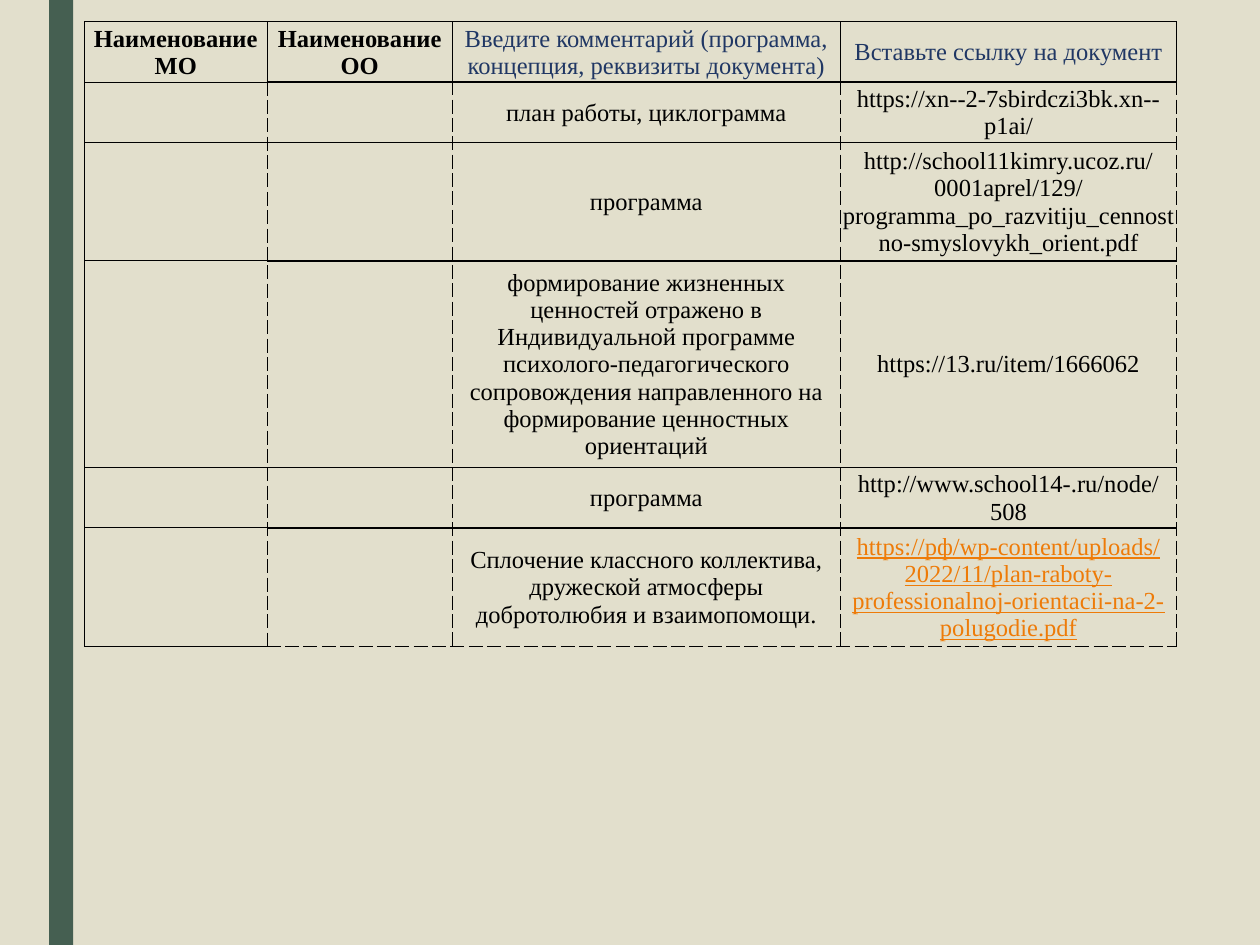
"""Build a slide with a table of school programmes and document links."""
import pptx
import pptx.dml.color
import pptx.enum.shapes
import pptx.enum.text
import pptx.oxml
import pptx.oxml.ns
import pptx.util

Inches = pptx.util.Inches


def rgb(color):
    return pptx.dml.color.RGBColor.from_string(color)


def add_text(tf, text, color="000000", bold=False, underline=False, size=14):
    p = tf.paragraphs[0]
    p.alignment = pptx.enum.text.PP_ALIGN.CENTER
    r = p.add_run()
    r.text = text
    r.font.name = "Times New Roman"
    r.font.size = pptx.util.Pt(size)
    r.font.bold = bold
    r.font.underline = underline
    r.font.color.rgb = rgb(color)


prs = pptx.Presentation()
prs.slide_width, prs.slide_height = Inches(10), Inches(7.5)
s = prs.slides.add_slide(prs.slide_layouts[6])
s.background.fill.solid()
s.background.fill.fore_color.rgb = rgb("E2DFCC")

sp = s.shapes.add_shape(pptx.enum.shapes.MSO_SHAPE.RECTANGLE,
                        Inches(0.39), 0, Inches(0.19), prs.slide_height)
sp.shadow.inherit = False
sp.fill.solid()
sp.fill.fore_color.rgb = rgb("455F51")
sp.line.fill.background()

rows = [
    ("Наименование МО", "Наименование ОО",
     "Введите комментарий (программа, концепция, реквизиты документа)",
     "Вставьте ссылку на документ"),
    ("", "", "план работы, циклограмма", "https://xn--2-7sbirdczi3bk.xn--p1ai/"),
    ("", "", "программа",
     "http://school11kimry.ucoz.ru/0001aprel/129/programma_po_razvitiju_cennostno-smyslovykh_orient.pdf"),
    ("", "", "формирование жизненных ценностей отражено в Индивидуальной программе "
     "психолого-педагогического сопровождения направленного на формирование ценностных ориентаций",
     "https://13.ru/item/1666062"),
    ("", "", "программа", "http://www.school14-.ru/node/508"),
    ("", "", "Сплочение классного коллектива, дружеской атмосферы добротолюбия и взаимопомощи.",
     "https://рф/wp-content/uploads/2022/11/plan-raboty-professionalnoj-orientacii-na-2-polugodie.pdf"),
]
widths = [1.45, 1.47, 3.08, 2.67]
heights = [0.48, 0.48, 0.94, 1.64, 0.48, 0.94]
last = len(rows) - 1
thin, thick, dashed = (0.5, "solid"), (1, "solid"), (0.5, "dash")

table = s.shapes.add_table(len(rows), len(widths), Inches(0.67), Inches(0.17),
                           Inches(sum(widths)), Inches(sum(heights))).table
table.first_row = table.horz_banding = False
for column, width in zip(table.columns, widths):
    column.width = Inches(width)
for row, height in zip(table.rows, heights):
    row.height = Inches(height)

for i, texts in enumerate(rows):
    for j, text in enumerate(texts):
        cell = table.cell(i, j)
        cell.vertical_anchor = pptx.enum.text.MSO_ANCHOR.MIDDLE
        cell.margin_left = cell.margin_right = cell.margin_top = Inches(0.01)
        cell.margin_bottom = 0
        if text:
            color = "203764" if i == 0 and j > 1 else "000000"
            is_link = i == last and j == 3
            add_text(cell.text_frame, text, color="EE7B08" if is_link else color,
                     bold=i == 0 and j < 2, underline=is_link)

        borders = {"L": dashed, "R": dashed, "T": thick, "B": thick}
        if i == 0:
            borders = {"L": thin, "R": thin, "T": thin, "B": thick if j else thin}
        elif j == 0:
            borders = {"L": thin, "R": dashed, "T": thin, "B": thick if i == last else thin}
        elif i == last:
            borders["B"] = dashed
        tcPr = cell._tc.get_or_add_tcPr()
        for side, (width, dash) in borders.items():
            tcPr.append(pptx.oxml.parse_xml(
                f'<a:ln{side} {pptx.oxml.ns.nsdecls("a")} w="{pptx.util.Pt(width)}">'
                f'<a:solidFill><a:srgbClr val="000000"/></a:solidFill>'
                f'<a:prstDash val="{dash}"/></a:ln{side}>'))
        cell.fill.background()

prs.save("out.pptx")
